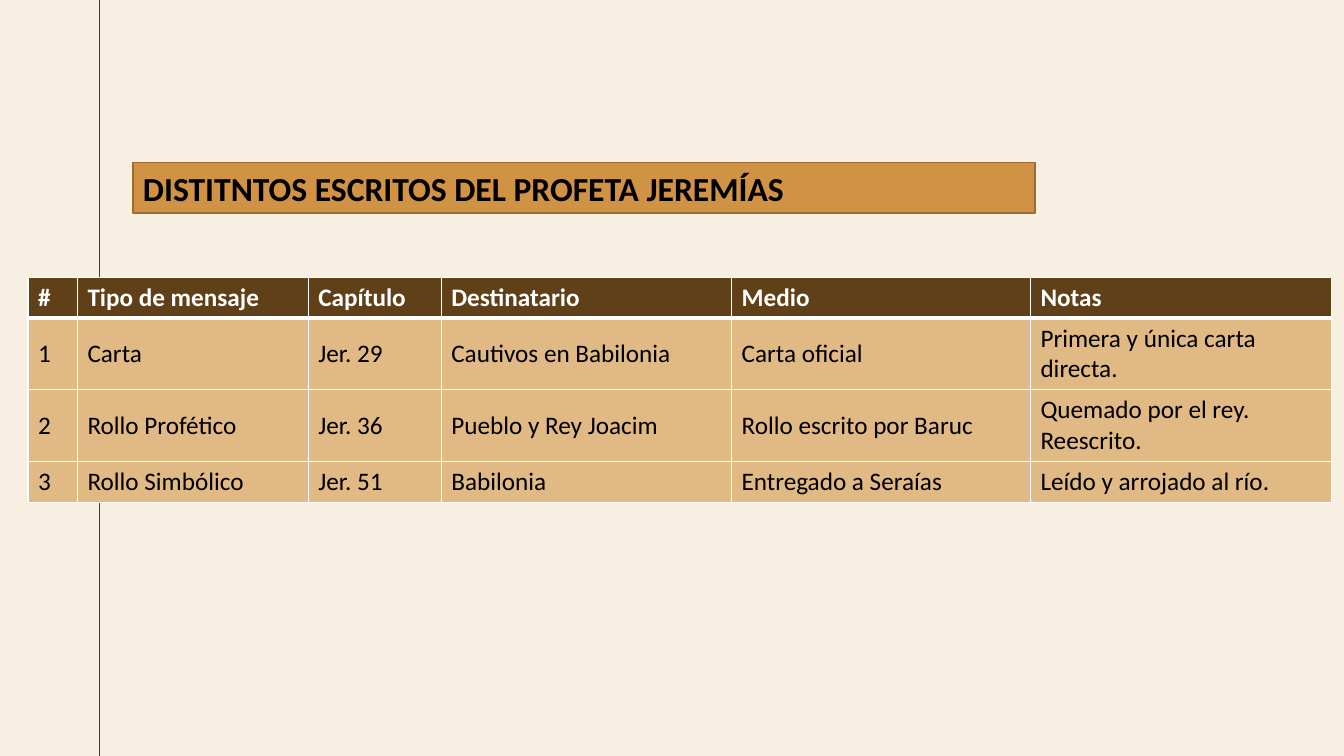
import dataclasses

import lxml.etree
import pptx
import pptx.dml.color
import pptx.enum.shapes
import pptx.enum.text
import pptx.oxml.ns
import pptx.util

Pt = pptx.util.Pt
qn = pptx.oxml.ns.qn


@dataclasses.dataclass(frozen=True)
class Theme:
    font: str = "Calibri"
    background: str = "F8EFE3"
    rule: str = "592F34"
    title_fill: str = "D09245"
    title_line: str = "9A6C33"
    header_fill: str = "5F4018"
    body_fill: str = "E0B984"
    light: str = "FFFFFF"
    dark: str = "000000"
    title_size: float = 24
    table_size: float = 18


def rgb(color):
    return pptx.dml.color.RGBColor.from_string(color)


def write(tf, text, *, font, size, color, bold=False):
    p = tf.paragraphs[0]
    p.alignment = pptx.enum.text.PP_ALIGN.LEFT
    r = p.add_run()
    r.text = text
    r.font.name = font
    r.font.size = Pt(size)
    r.font.bold = bold
    r.font.color.rgb = rgb(color)


class SlideBuilder:
    def __init__(self, s, theme):
        self.s = s
        self.theme = theme

    def background(self):
        fill = self.s.background.fill
        fill.solid()
        fill.fore_color.rgb = rgb(self.theme.background)

    def line(self, x1, y1, x2, y2, width):
        cx = self.s.shapes.add_connector(
            pptx.enum.shapes.MSO_CONNECTOR.STRAIGHT, Pt(x1), Pt(y1), Pt(x2), Pt(y2))
        cx.line.color.rgb = rgb(self.theme.rule)
        cx.line.width = Pt(width)
        lxml.etree.SubElement(cx.element.spPr, qn("a:effectLst"))

    def title(self, text, left, top, width, height):
        t = self.theme
        sp = self.s.shapes.add_shape(
            pptx.enum.shapes.MSO_SHAPE.RECTANGLE, Pt(left), Pt(top), Pt(width), Pt(height))
        sp.shadow.inherit = False
        sp.fill.solid()
        sp.fill.fore_color.rgb = rgb(t.title_fill)
        sp.line.color.rgb = rgb(t.title_line)
        sp.line.width = Pt(1)
        tf = sp.text_frame
        tf.word_wrap = True
        tf.auto_size = pptx.enum.text.MSO_AUTO_SIZE.SHAPE_TO_FIT_TEXT
        tf.vertical_anchor = pptx.enum.text.MSO_ANCHOR.MIDDLE
        write(tf, text, font=t.font, size=t.title_size, color=t.dark, bold=True)

    def borders(self, cell, widths):
        tcPr = cell._tc.get_or_add_tcPr()
        for i, (side, width) in enumerate(widths.items()):
            ln = lxml.etree.Element(qn(f"a:ln{side}"), w=str(Pt(width)))
            fill = lxml.etree.SubElement(ln, qn("a:solidFill"))
            lxml.etree.SubElement(fill, qn("a:srgbClr"), val=self.theme.light)
            tcPr.insert(i, ln)

    def table(self, rows, left, top, col_widths, row_height):
        t = self.theme
        table = self.s.shapes.add_table(
            len(rows), len(col_widths), Pt(left), Pt(top),
            Pt(sum(col_widths)), Pt(row_height * len(rows))).table
        for column, width in zip(table.columns, col_widths):
            column.width = Pt(width)
        for i, texts in enumerate(rows):
            header = i == 0
            table.rows[i].height = Pt(row_height)
            for j, text in enumerate(texts):
                cell = table.cell(i, j)
                cell.vertical_anchor = pptx.enum.text.MSO_ANCHOR.MIDDLE
                cell.fill.solid()
                cell.fill.fore_color.rgb = rgb(t.header_fill if header else t.body_fill)
                write(cell.text_frame, text, font=t.font, size=t.table_size,
                      color=t.light if header else t.dark, bold=header)
                # The heavy rule lies between the header and the first row
                self.borders(cell, {"L": 1, "R": 1, "T": 3 if i == 1 else 1,
                                    "B": 3 if header else 1})


def main():
    prs = pptx.Presentation()
    prs.slide_width, prs.slide_height = Pt(960), Pt(540)
    slide = SlideBuilder(prs.slides.add_slide(prs.slide_layouts[6]), Theme())

    # Background and vertical rule
    slide.background()
    slide.line(70.8, 0, 70.8, 540, 0.75)

    # Table of writings
    writings = [
        ("#", "Tipo de mensaje", "Capítulo", "Destinatario", "Medio", "Notas"),
        ("1", "Carta", "Jer. 29", "Cautivos en Babilonia", "Carta oficial",
         "Primera y única carta directa."),
        ("2", "Rollo Profético", "Jer. 36", "Pueblo y Rey Joacim",
         "Rollo escrito por Baruc", "Quemado por el rey. Reescrito."),
        ("3", "Rollo Simbólico", "Jer. 51", "Babilonia", "Entregado a Seraías",
         "Leído y arrojado al río."),
    ]
    slide.table(writings, 20, 198, (35.3, 164.9, 95, 207.4, 213.5, 215.3), 29.2)

    # Title bar
    slide.title("DISTITNTOS ESCRITOS DEL PROFETA JEREMÍAS", 95, 116, 644.4, 36.35)

    prs.save("out.pptx")


if __name__ == "__main__":
    main()
